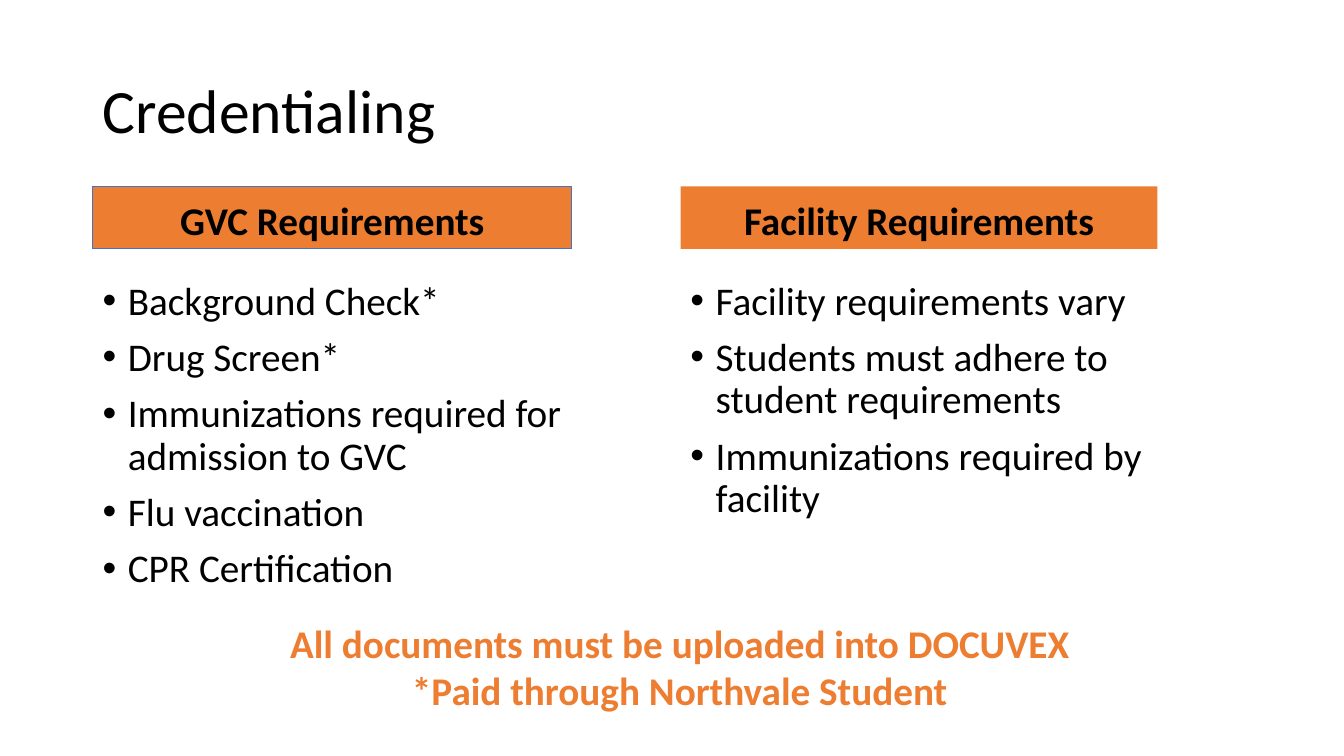
from pptx import Presentation
from pptx import util as u
from pptx.dml.color import RGBColor
from pptx.enum import shapes, text
from pptx.oxml.ns import qn
from lxml import etree

PX = 9144  # EMU per px, 100 px to the inch


def rgb(value):
    return RGBColor.from_string(value)


class Deck:
    font, black, orange, blue = "Calibri", "000000", "ED7D31", "4472C4"

    def __init__(self, width, height):
        self.prs = Presentation()
        self.prs.slide_width, self.prs.slide_height = width * PX, height * PX
        self.s = self.prs.slides.add_slide(self.prs.slide_layouts[6])

    def set_text(self, sp, lines, size=28, color=black, bold=False,
                 align="LEFT", anchor="TOP", spacing=1.0, before=0,
                 bullet=False):
        tf = sp.text_frame
        tf.word_wrap = True
        tf.vertical_anchor = getattr(text.MSO_ANCHOR, anchor)
        for i, line in enumerate(lines):
            p = tf.paragraphs[0] if i == 0 else tf.add_paragraph()
            p.text = line
            p.alignment = getattr(text.PP_ALIGN, align)
            p.line_spacing, p.space_before = spacing, u.Pt(before)
            p.font.name, p.font.size, p.font.bold = self.font, u.Pt(size), bold
            p.font.color.rgb = rgb(color)
            if bullet:
                self.bullet(p)

    def bullet(self, p):
        pPr = p._p.get_or_add_pPr()
        pPr.set("marL", str(25 * PX))
        pPr.set("indent", str(-25 * PX))
        bu_font = etree.Element(qn("a:buFont"), typeface="Arial")
        bu_char = etree.Element(qn("a:buChar"), char="•")
        at = pPr.index(pPr.find(qn("a:defRPr")))
        pPr[at:at] = [bu_font, bu_char]

    def label(self, x, y, w, h, lines, **style):
        sp = self.s.shapes.add_textbox(x * PX, y * PX, w * PX, h * PX)
        self.set_text(sp, lines, **style)

    def banner(self, x, y, w, h, line, outline=None):
        sp = self.s.shapes.add_shape(shapes.MSO_SHAPE.RECTANGLE,
                                     x * PX, y * PX, w * PX, h * PX)
        sp.shadow.inherit = False
        sp.fill.solid()
        sp.fill.fore_color.rgb = rgb(self.orange)
        if outline:
            sp.line.color.rgb = rgb(outline)
            sp.line.width = u.Pt(0.75)
        else:
            sp.line.fill.background()
        self.set_text(sp, [line], bold=True, align="CENTER", anchor="BOTTOM",
                      spacing=0.9, before=10)


def main():
    d = Deck(1333, 750)

    # Title
    d.label(92, 40, 1150, 145, ["Credentialing"], size=44, anchor="MIDDLE",
            spacing=0.9)

    # Two requirement columns: left, banner width, list width, outline
    columns = [
        (92, 475, 564, d.blue, "GVC Requirements",
         ["Background Check*", "Drug Screen*",
          "Immunizations required for admission to GVC",
          "Flu vaccination", "CPR Certification"]),
        (675, 473, 534, None, "Facility Requirements",
         ["Facility requirements vary",
          "Students must adhere to student requirements",
          "Immunizations required by facility"]),
    ]
    for x, banner_w, list_w, outline, heading, items in columns:
        d.banner(x, 185, banner_w, 62, heading, outline)
        d.label(x, 274, list_w, 325, items, spacing=0.9, before=10, bullet=True)

    # Upload note
    d.label(223, 609, 902, 104,
            ["All documents must be uploaded into DOCUVEX",
             "*Paid through Northvale Student"],
            color=d.orange, bold=True, align="CENTER")

    d.prs.save("out.pptx")


if __name__ == "__main__":
    main()
